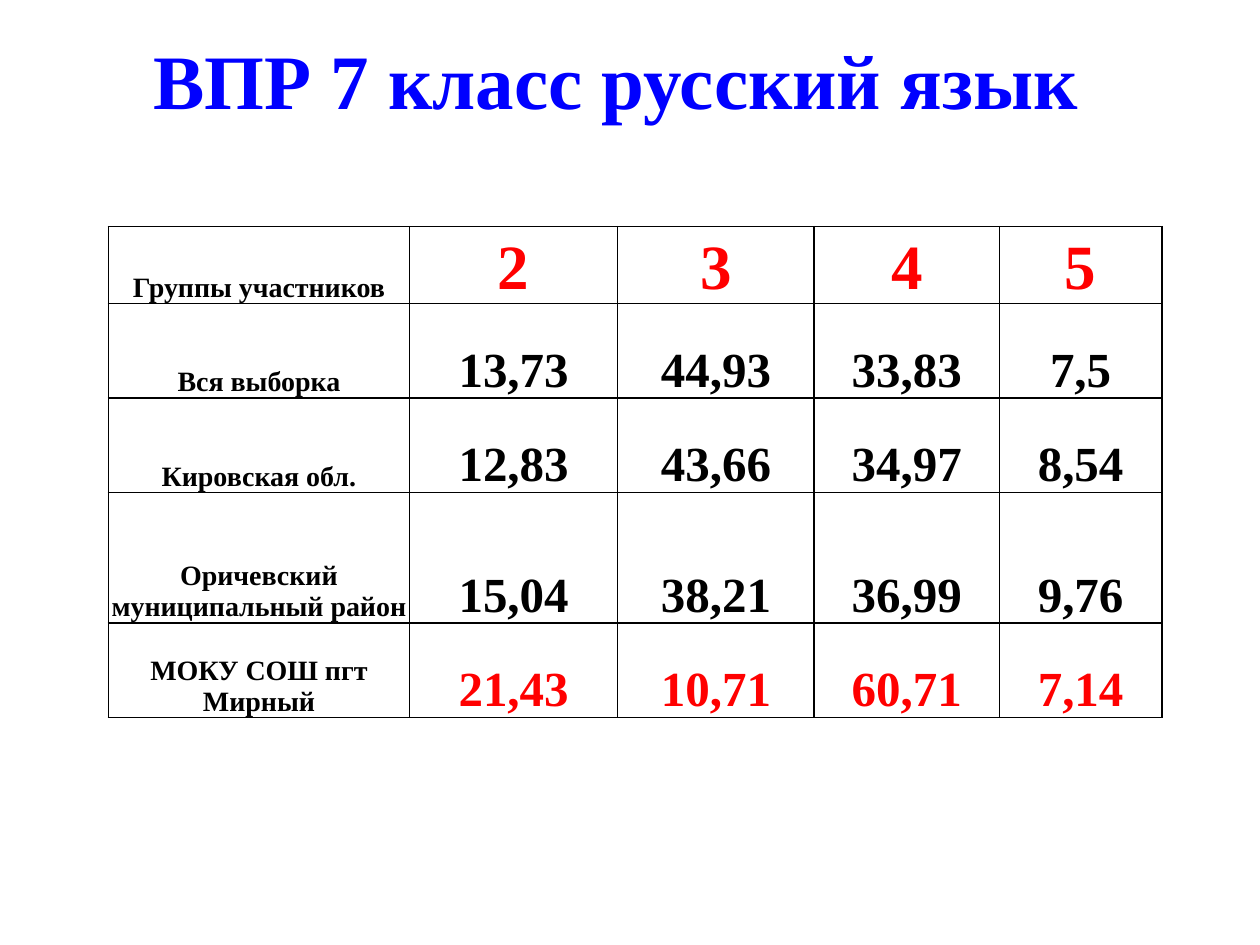
from lxml.etree import SubElement
from pptx import Presentation
from pptx.dml.color import RGBColor
from pptx.enum.text import MSO_ANCHOR, PP_ALIGN
from pptx.oxml.ns import qn
from pptx.util import Pt

BLACK, RED, BLUE = "000000", "FF0000", "0000FF"

HEADER = ["Группы участников", "2", "3", "4", "5"]
RESULTS = [
    ["Вся выборка", "13,73", "44,93", "33,83", "7,5"],
    ["Кировская обл.", "12,83", "43,66", "34,97", "8,54"],
    ["Оричевский муниципальный район", "15,04", "38,21", "36,99", "9,76"],
    ["МОКУ СОШ пгт Мирный", "21,43", "10,71", "60,71", "7,14"],
]
COLUMN_WIDTHS = [172, 119, 112.3, 105.8, 92.9]
ROW_HEIGHTS = [42.5, 54, 54, 74.6, 54]


def rgb(color):
    return RGBColor.from_string(color)


class SlideBuilder:
    font_name = "Times New Roman"
    border_width = Pt(1)

    def __init__(self, slide):
        self.slide = slide

    def set_text(self, frame, text, size, color):
        """Put one bold centred paragraph in a text frame."""
        frame.word_wrap = True
        paragraph = frame.paragraphs[0]
        paragraph.text = text
        paragraph.alignment = PP_ALIGN.CENTER
        font = paragraph.font
        font.name, font.size, font.bold = self.font_name, Pt(size), True
        font.color.rgb = rgb(color)

    def title(self, text, left, top, width, height, size, color):
        frame = self.slide.shapes.add_textbox(
            Pt(left), Pt(top), Pt(width), Pt(height)).text_frame
        frame.vertical_anchor = MSO_ANCHOR.MIDDLE
        self.set_text(frame, text, size, color)

    def border(self, cell):
        properties = cell._tc.get_or_add_tcPr()
        for side in ("a:lnL", "a:lnR", "a:lnT", "a:lnB"):
            line = SubElement(properties, qn(side), w=str(self.border_width))
            fill = SubElement(line, qn("a:solidFill"))
            SubElement(fill, qn("a:srgbClr"), val=BLACK)

    def table(self, rows, left, top, widths, heights, style):
        """Draw a bordered table; style(row, column) gives text size and colour."""
        table = self.slide.shapes.add_table(
            len(rows), len(widths), Pt(left), Pt(top),
            Pt(sum(widths)), Pt(sum(heights))).table
        table.first_row = table.horz_banding = False
        for column, width in zip(table.columns, widths):
            column.width = Pt(width)
        for row, height in zip(table.rows, heights):
            row.height = Pt(height)
        for r, texts in enumerate(rows):
            for c, text in enumerate(texts):
                cell = table.cell(r, c)
                cell.margin_left = cell.margin_right = cell.margin_top = Pt(0.7)
                cell.margin_bottom = Pt(0)
                cell.vertical_anchor = MSO_ANCHOR.BOTTOM
                self.border(cell)
                cell.fill.background()
                self.set_text(cell.text_frame, text, *style(r, c))


def result_style(row, column):
    """Red grades and own-school results, black elsewhere."""
    if column == 0:
        return 16, BLACK
    if row == 0:
        return 36, RED
    return 28, RED if row == len(RESULTS) else BLACK


def main():
    presentation = Presentation()
    presentation.slide_width, presentation.slide_height = Pt(720), Pt(540)
    builder = SlideBuilder(
        presentation.slides.add_slide(presentation.slide_layouts[6]))
    builder.title("ВПР 7 класс русский язык", 28, 0, 648, 90, 44, BLUE)
    builder.table([HEADER, *RESULTS], 62, 129.5,
                  COLUMN_WIDTHS, ROW_HEIGHTS, result_style)
    presentation.save("out.pptx")


if __name__ == "__main__":
    main()
